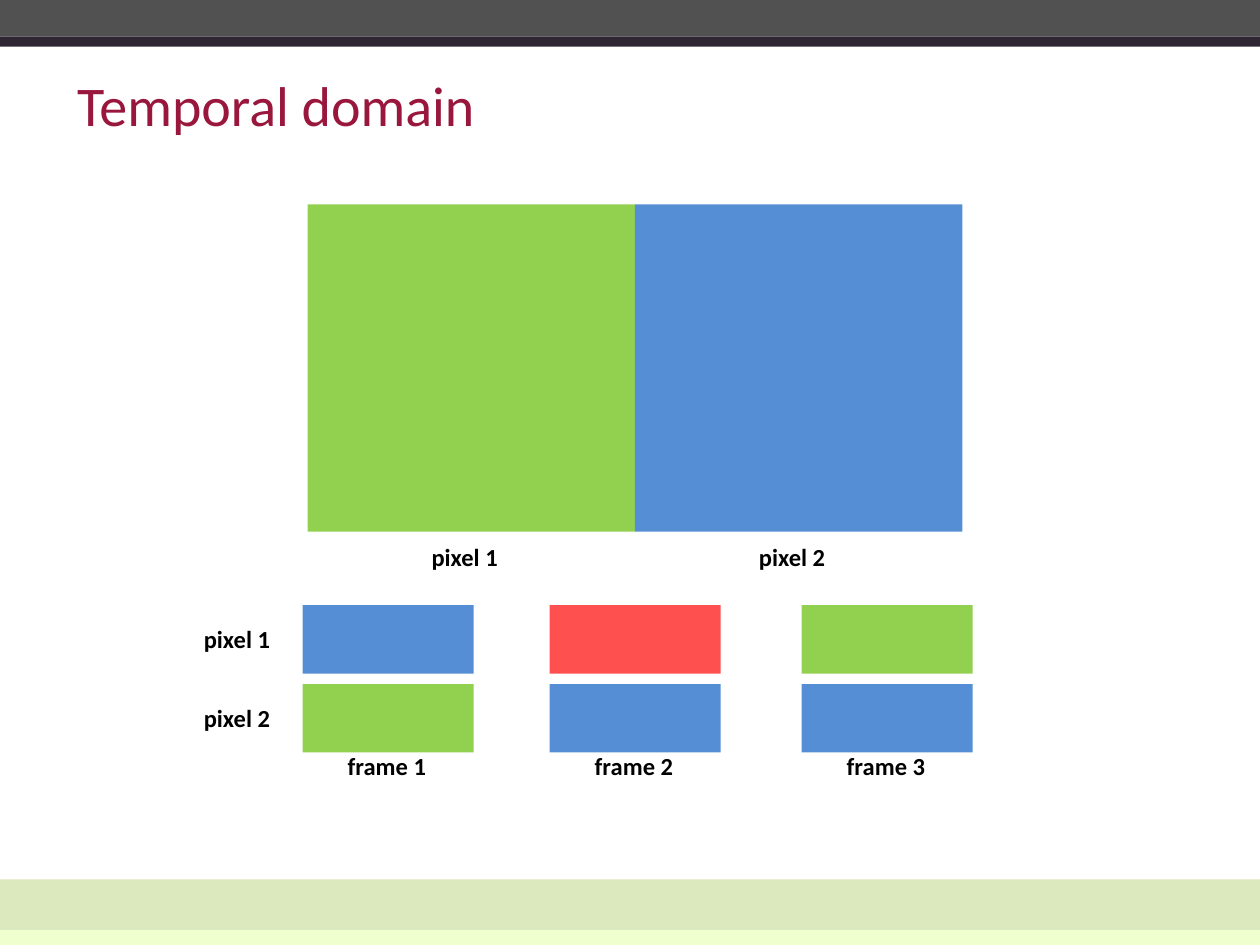
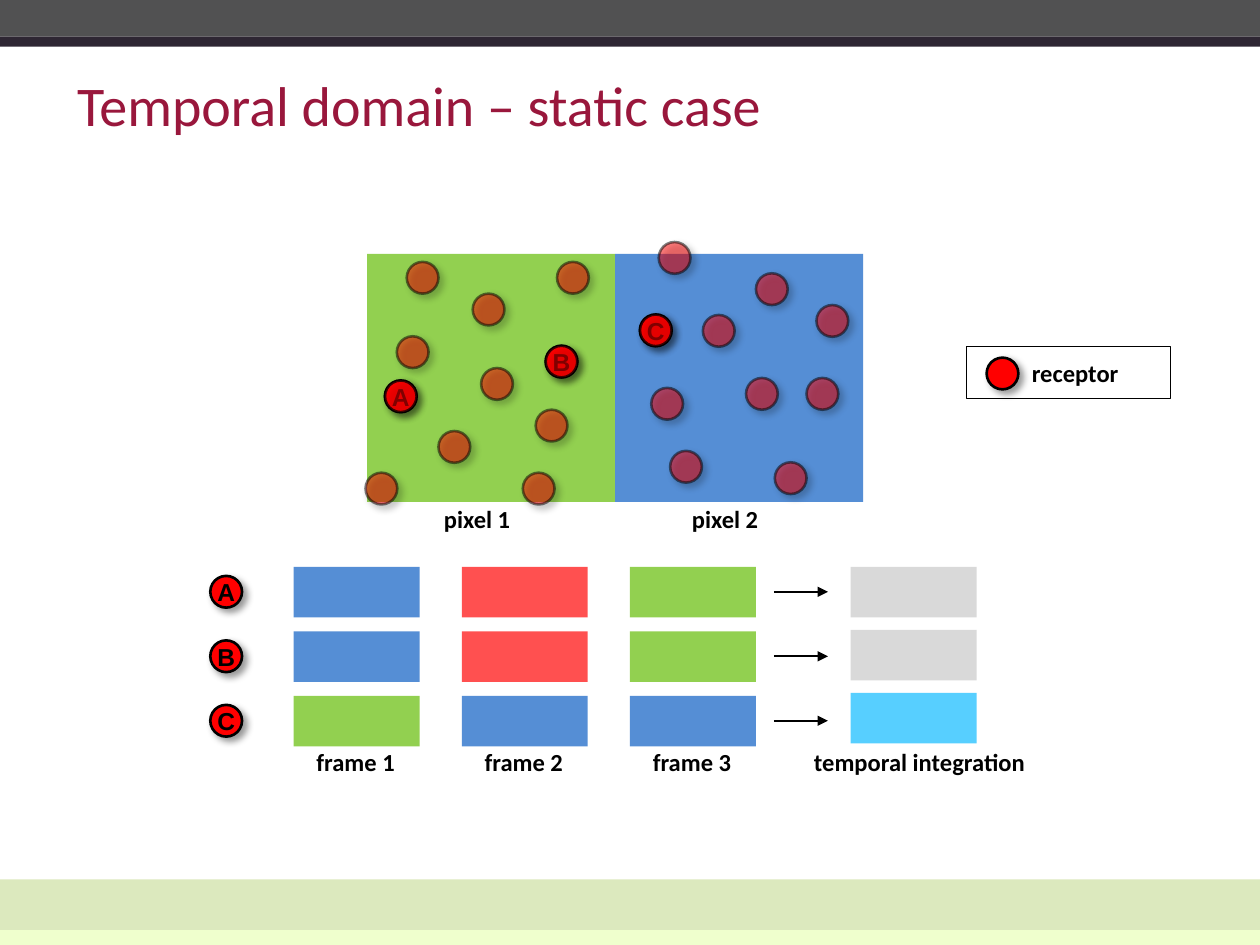
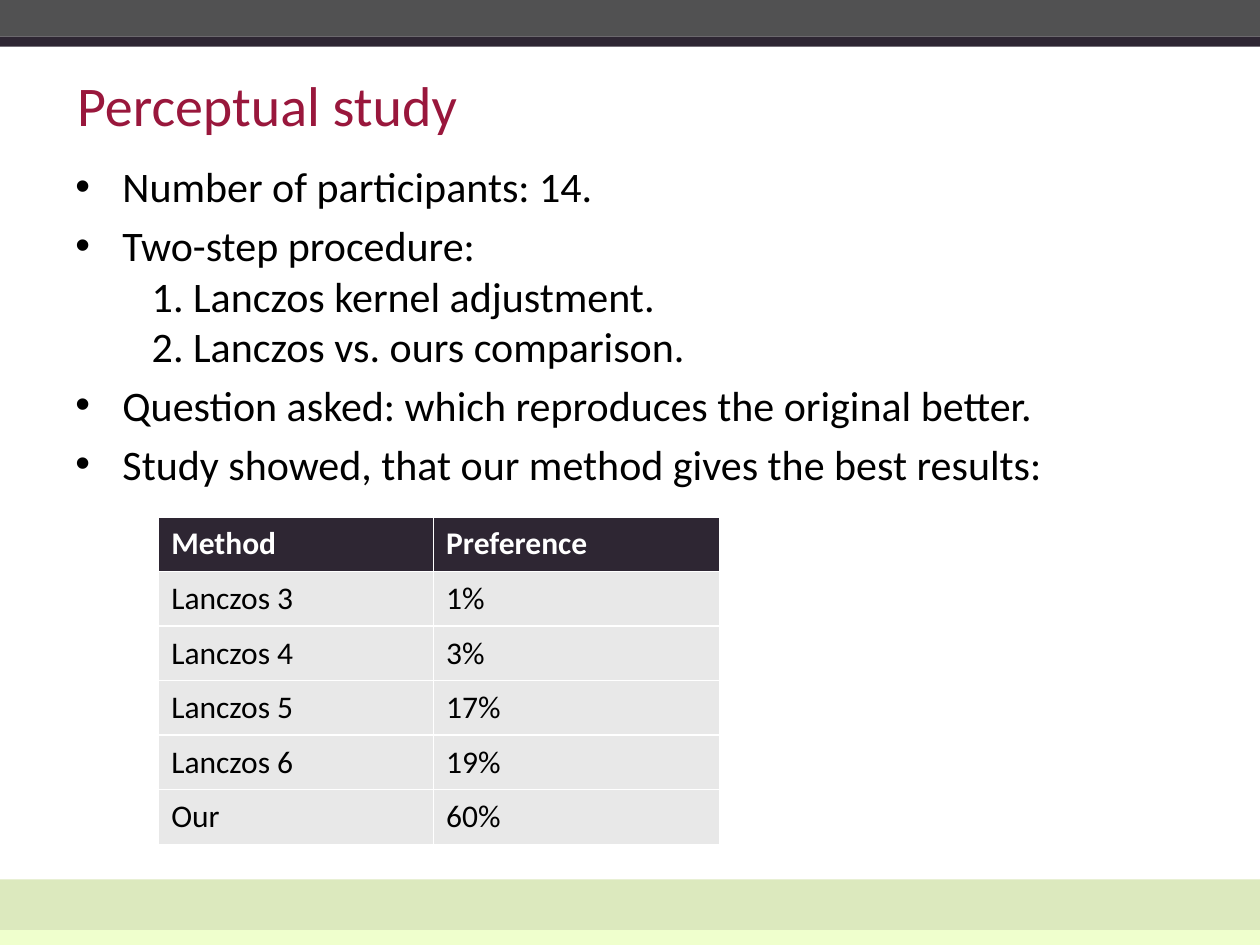
import lxml.etree
import pptx
import pptx.dml.color
import pptx.enum.shapes
import pptx.enum.text
import pptx.oxml.ns
import pptx.util

Cm = pptx.util.Cm
Pt = pptx.util.Pt
qn = pptx.oxml.ns.qn
SHAPES = pptx.enum.shapes.MSO_SHAPE
ALIGN = pptx.enum.text.PP_ALIGN
ANCHOR = pptx.enum.text.MSO_ANCHOR

COLORS = {
    "title": "99173C", "black": "000000", "white": "FFFFFF",
    "top": "515152", "dark": "2E2633", "bottom": "DCE9BE", "edge": "EFFFCD",
    "blue": "558ED5", "green": "92D050", "red": "FF5050",
    "gray": "D9D9D9", "cyan": "57CFFF", "receptor": "FF0000", "row": "E8E8E8",
}
WIDTH, HEIGHT = 25.4, 19.05
BANDS = [("bottom", 17.73, 1.12), ("edge", 18.75, 0.3), ("top", 0, 0.74), ("dark", 0.74, 0.2)]
RECEPTOR_SIZE = 0.64


def rgb(name):
    return pptx.dml.color.RGBColor.from_string(COLORS[name])


def add_xml(parent, tag, **attributes):
    return lxml.etree.SubElement(parent, qn(tag), {key: str(value) for key, value in attributes.items()})


class Deck:
    def __init__(self):
        self.presentation = pptx.Presentation()
        self.presentation.slide_width = Cm(WIDTH)
        self.presentation.slide_height = Cm(HEIGHT)
        self.slide = None

    def new_slide(self, title):
        self.slide = self.presentation.slides.add_slide(self.presentation.slide_layouts[5])
        for color, top, height in BANDS:
            self.box(0, top, WIDTH, height, color)
        shape = self.slide.shapes.title
        shape.left, shape.top, shape.width, shape.height = Cm(1.3), Cm(1.32), Cm(22.86), Cm(1.55)
        frame = shape.text_frame
        frame.text = title
        frame.vertical_anchor = ANCHOR.MIDDLE
        frame.auto_size = pptx.enum.text.MSO_AUTO_SIZE.NONE
        frame.paragraphs[0].alignment = ALIGN.LEFT
        self.format(frame.paragraphs[0], 32, "title")

    def format(self, paragraph, size, color="black", bold=False, font="Calibri"):
        for run in paragraph.runs:
            run.font.name = font
            run.font.size = Pt(size)
            run.font.bold = bold
            run.font.color.rgb = rgb(color)

    def box(self, left, top, width, height, fill=None, line=None, line_width=0.75, kind=SHAPES.RECTANGLE):
        shape = self.slide.shapes.add_shape(kind, Cm(left), Cm(top), Cm(width), Cm(height))
        shape.shadow.inherit = False
        if fill:
            shape.fill.solid()
            shape.fill.fore_color.rgb = rgb(fill)
        else:
            shape.fill.background()
        if line:
            shape.line.color.rgb = rgb(line)
            shape.line.width = Pt(line_width)
        else:
            shape.line.fill.background()
        return shape

    def receptor(self, left, top, letter="", faded=False):
        shape = self.box(left, top, RECEPTOR_SIZE, RECEPTOR_SIZE, "receptor", "black", 1.5, SHAPES.OVAL)
        properties = shape.element.spPr
        if faded:
            for color in list(properties.iter(qn("a:srgbClr"))):
                add_xml(color, "a:alpha", val=50000)
        shadow = add_xml(properties.find(qn("a:effectLst")), "a:outerShdw", blurRad=Pt(4), dist=Pt(3),
                         dir=45 * 60000, algn="tl", rotWithShape=0)
        add_xml(add_xml(shadow, "a:srgbClr", val=COLORS["black"]), "a:alpha", val=40000)
        if letter:
            frame = shape.text_frame
            frame.text = letter
            frame.word_wrap = False
            frame.vertical_anchor = ANCHOR.MIDDLE
            frame.margin_left = frame.margin_right = frame.margin_top = frame.margin_bottom = 0
            frame.paragraphs[0].alignment = ALIGN.CENTER
            self.format(frame.paragraphs[0], 14, bold=True, font="Arial")

    def label(self, text, left, top, width=2.4):
        frame = self.slide.shapes.add_textbox(Cm(left), Cm(top), Cm(width), Cm(0.6)).text_frame
        frame.text = text
        frame.word_wrap = True
        frame.margin_left = frame.margin_right = Cm(0.1)
        frame.margin_top = frame.margin_bottom = 0
        self.format(frame.paragraphs[0], 14, bold=True)

    def pixels(self, left, top, size, label_offset, label_top):
        """Draw the two large neighbouring pixels with their labels."""
        for index, color in enumerate(["green", "blue"]):
            self.box(left + index * size, top, size, size, color)
            self.label(f"pixel {index + 1}", left + index * size + label_offset, label_top)

    def frames(self, lefts, tops, width, height, rows, label_offset, label_top):
        """Draw one row of frame colours per top and label the columns."""
        for top, colors in zip(tops, rows):
            for left, color in zip(lefts, colors):
                self.box(left, top, width, height, color)
        for number, left in enumerate(lefts, 1):
            self.label(f"frame {number}", left + label_offset, label_top)

    def arrow(self, left, right, y):
        connector = self.slide.shapes.add_connector(
            pptx.enum.shapes.MSO_CONNECTOR.STRAIGHT, Cm(left), Cm(y), Cm(right), Cm(y))
        connector.line.color.rgb = rgb("black")
        connector.line.width = Pt(1)
        properties = connector.element.spPr
        add_xml(properties.find(qn("a:ln")), "a:tailEnd", type="triangle")
        add_xml(properties, "a:effectLst")

    def bullets(self, items, left, top, width, height):
        """Write (text, is_bullet) items; the others are indented steps."""
        frame = self.slide.shapes.add_textbox(Cm(left), Cm(top), Cm(width), Cm(height)).text_frame
        frame.word_wrap = True
        for index, (text, is_bullet) in enumerate(items):
            paragraph = frame.paragraphs[0] if index == 0 else frame.add_paragraph()
            paragraph.text = text
            paragraph.space_before = Pt(4.8 if is_bullet else 0)
            self.format(paragraph, 24)
            properties = paragraph._p.get_or_add_pPr()
            properties.set("marL", str(Cm(0.95 if is_bullet else 1.54)))
            if is_bullet:
                properties.set("indent", str(-Cm(0.95)))
                add_xml(properties, "a:buFont", typeface="Arial")
                add_xml(properties, "a:buChar", char="•")

    def table(self, rows, left, top, widths, row_height):
        table = self.slide.shapes.add_table(len(rows), len(widths), Cm(left), Cm(top), Cm(sum(widths)),
                                            Cm(row_height * len(rows))).table
        table.horz_banding = False
        for column, width in zip(table.columns, widths):
            column.width = Cm(width)
        for row_index, row in enumerate(rows):
            header = row_index == 0
            for column_index, text in enumerate(row):
                cell = table.cell(row_index, column_index)
                cell.text = text
                cell.vertical_anchor = ANCHOR.MIDDLE
                cell.fill.solid()
                cell.fill.fore_color.rgb = rgb("dark" if header else "row")
                self.format(cell.text_frame.paragraphs[0], 18, "white" if header else "black", header)


def temporal_domain(deck):
    deck.new_slide("Temporal domain")
    deck.pixels(6.2, 4.12, 6.6, 2.4, 10.92)
    tops = [12.2, 13.79]
    deck.frames([6.1, 11.08, 16.16], tops, 3.45, 1.38,
                [["blue", "red", "green"], ["green", "blue", "blue"]], 0.81, 15.14)
    for number, top in enumerate(tops, 1):
        deck.label(f"pixel {number}", 4.01, top + 0.39)


def static_case(deck):
    deck.new_slide("Temporal domain – static case")
    deck.pixels(7.4, 5.12, 5, 1.45, 10.16)

    labelled = {"A": (7.76, 7.67), "B": (11, 6.97), "C": (12.9, 6.34)}
    for letter, (left, top) in labelled.items():
        deck.receptor(left, top, letter)
    unlabelled = [
        (8.2, 5.28), (9.53, 5.92), (8, 6.78), (9.7, 7.42), (7.37, 9.53), (14.17, 6.35),
        (8.84, 8.69), (11.23, 5.28), (10.54, 9.53), (13.28, 4.88), (16.26, 7.62), (10.8, 8.26),
        (16.46, 6.15), (13.51, 9.09), (15.24, 5.51), (13.13, 7.82), (15.04, 7.62), (15.62, 9.32),
    ]
    for left, top in unlabelled + list(labelled.values()):
        deck.receptor(left, top, faded=True)

    first_top, pitch = 11.43, 1.3
    tops = [first_top + index * pitch for index in range(3)]
    deck.frames([5.92 + index * 3.39 for index in range(3)], tops, 2.54, 1.02,
                [["blue", "red", "green"], ["blue", "red", "green"], ["green", "blue", "blue"]], 0.36, 15.06)
    for letter, top in zip(labelled, tops):
        deck.receptor(4.24, top + 0.18, letter)
        deck.arrow(15.6, 16.69, top + 0.5)
    for index, color in enumerate(["gray", "gray", "cyan"]):
        deck.box(17.15, first_top + index * 1.27, 2.54, 1.02, color)
    deck.label("temporal integration", 16.31, 15.06, 4.8)

    deck.box(19.48, 6.98, 4.12, 1.06, line="black")
    deck.receptor(19.89, 7.21)
    deck.label("receptor", 20.7, 7.21)


def perceptual_study(deck):
    deck.new_slide("Perceptual study")
    deck.bullets([
        ("Number of participants: 14.", True),
        ("Two-step procedure:", True),
        ("1. Lanczos kernel adjustment.", False),
        ("2. Lanczos vs. ours comparison.", False),
        ("Question asked: which reproduces the original better.", True),
        ("Study showed, that our method gives the best results:", True),
    ], 1.27, 3.12, 22.86, 7)
    deck.table([
        ["Method", "Preference"],
        ["Lanczos 3", "1%"],
        ["Lanczos 4", "3%"],
        ["Lanczos 5", "17%"],
        ["Lanczos 6", "19%"],
        ["Our", "60%"],
    ], 3.2, 10.42, [5.54, 5.76], 1.1)


def main():
    deck = Deck()
    temporal_domain(deck)
    static_case(deck)
    perceptual_study(deck)
    deck.presentation.save("out.pptx")


if __name__ == "__main__":
    main()
